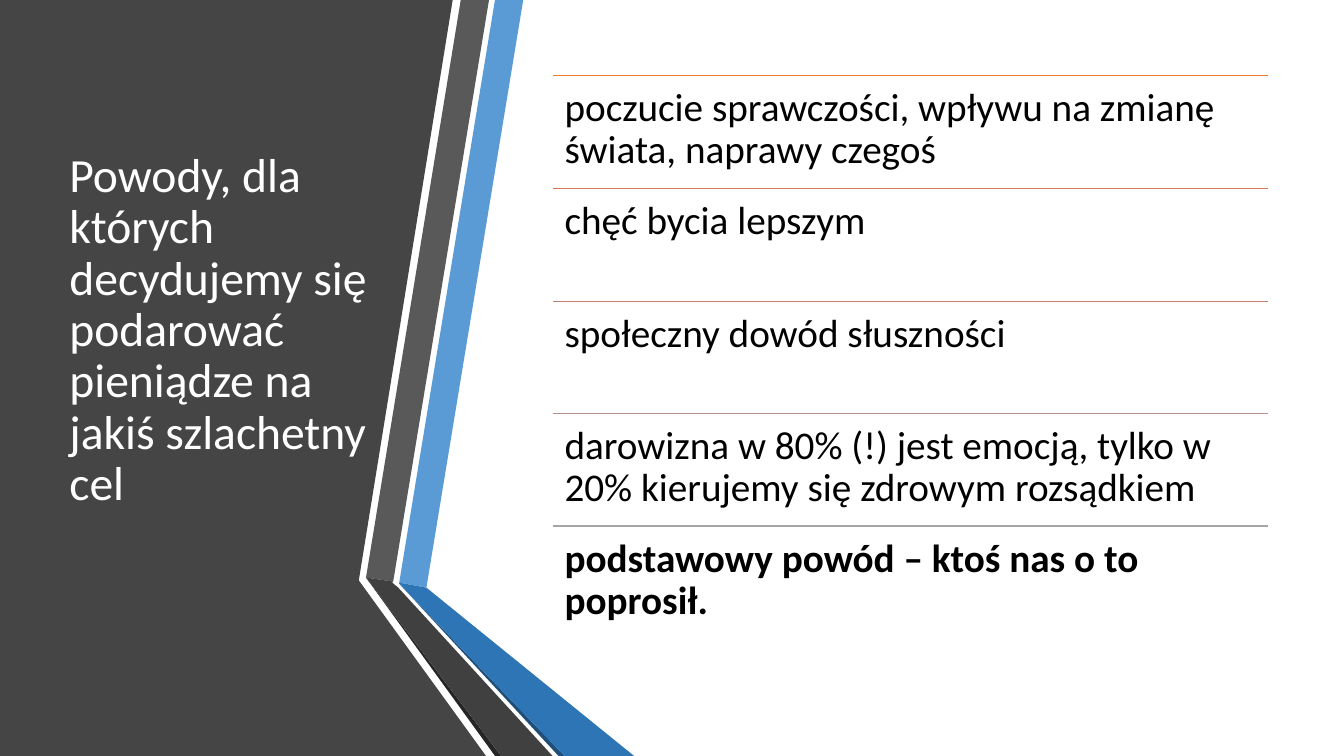
from lxml import etree
from pptx import Presentation
from pptx.dml.color import RGBColor
from pptx.enum.shapes import MSO_CONNECTOR
from pptx.enum.text import MSO_ANCHOR
from pptx.oxml.ns import qn
from pptx.util import Pt

PX = 9144  # 100 px to the inch
STRAIGHT = MSO_CONNECTOR.STRAIGHT
TOP, MIDDLE = MSO_ANCHOR.TOP, MSO_ANCHOR.MIDDLE
FONT = "Calibri"

COLORS = {
    "white": "FFFFFF",
    "black": "000000",
    "panel": "454545",
    "blue": "5B9BD5",
    "blue_mid": "2E75B6",
    "blue_dark": "1F4E79",
    "gray": "595959",
    "gray_mid": "404040",
    "gray_dark": "262626",
    "rule_1": "ED7D31",
    "rule_2": "D87A51",
    "rule_3": "C48170",
    "rule_4": "B4908B",
    "rule_5": "A5A5A5",
}

# Back to front: colour and corner points in px
BANDS = [
    ("panel", [(0, 0), (449, 0), (356, 575), (356, 576), (482, 750), (0, 750)]),
    ("blue", [(396, 578), (423, 583), (519, 0), (491, 0)]),
    ("gray", [(485, 0), (457, 0), (363, 573), (390, 577)]),
    ("gray_dark", [(363, 573), (491, 750), (497, 750)]),
    ("blue_dark", [(396, 579), (554, 750), (560, 750)]),
    ("blue_mid", [(396, 579), (560, 750), (629, 750), (423, 583), (396, 578)]),
    ("gray_mid", [(548, 750), (395, 583), (389, 578), (390, 577), (363, 573), (497, 750)]),
]

TITLE = "Powody, dla których decydujemy się podarować pieniądze na jakiś szlachetny cel"
REASONS = [
    "poczucie sprawczości, wpływu na zmianę świata, naprawy czegoś",
    "chęć bycia lepszym",
    "społeczny dowód słuszności",
    "darowizna w 80% (!) jest emocją, tylko w 20% kierujemy się zdrowym rozsądkiem",
    "podstawowy powód – ktoś nas o to poprosił.",
]
LIST_LEFT, LIST_TOP, LIST_WIDTH, ROW_HEIGHT = 548, 75, 710, 112
LAST_RULE_TOP = 522


def rgb(name):
    return RGBColor.from_string(COLORS[name])


def add_band(s, color, points):
    builder = s.shapes.build_freeform(*points[0], scale=PX)
    builder.add_line_segments(points[1:], close=True)
    sp = builder.convert_to_shape()
    sp.shadow.inherit = False
    sp.fill.solid()
    sp.fill.fore_color.rgb = rgb(color)
    sp.line.fill.background()


def add_text(s, text, box, *, size, color, bold=False, anchor=TOP, insets=(10, 5, 10, 5)):
    """Add wrapped text; box is left, top, width, height and insets run left, top, right, bottom."""
    tf = s.shapes.add_textbox(*(v * PX for v in box)).text_frame
    tf.word_wrap = True
    tf.vertical_anchor = anchor
    tf.margin_left, tf.margin_top, tf.margin_right, tf.margin_bottom = (v * PX for v in insets)
    p = tf.paragraphs[0]
    p.line_spacing = 0.9
    r = p.add_run()
    r.text = text
    r.font.name = FONT
    r.font.size = Pt(size)
    r.font.bold = bold
    r.font.color.rgb = rgb(color)


def add_rule(s, left, top, width, color):
    line = s.shapes.add_connector(STRAIGHT, left * PX, top * PX, (left + width) * PX, top * PX)
    line.line.color.rgb = rgb(color)
    line.line.width = Pt(1)
    etree.SubElement(line._element.spPr, qn("a:effectLst"))


def add_reasons(s):
    last = len(REASONS) - 1
    for i, reason in enumerate(REASONS):
        top = LIST_TOP + round((LAST_RULE_TOP - LIST_TOP) * i / last)
        add_rule(s, LIST_LEFT, top, LIST_WIDTH, f"rule_{i + 1}")
        add_text(s, reason, (LIST_LEFT, top, LIST_WIDTH, ROW_HEIGHT), size=28,
                 color="black", bold=i == last, insets=(12, 12, 12, 12))


def main():
    prs = Presentation()
    prs.slide_width, prs.slide_height = 1333 * PX, 750 * PX
    s = prs.slides.add_slide(prs.slide_layouts[6])
    s.background.fill.solid()
    s.background.fill.fore_color.rgb = rgb("white")
    for color, points in BANDS:
        add_band(s, color, points)
    # The deep bottom inset lifts the title above the middle of its box
    add_text(s, TITLE, (59, 75, 325, 558), size=34, color="white",
             anchor=MIDDLE, insets=(10, 5, 10, 56))
    add_reasons(s)
    prs.save("out.pptx")


if __name__ == "__main__":
    main()
